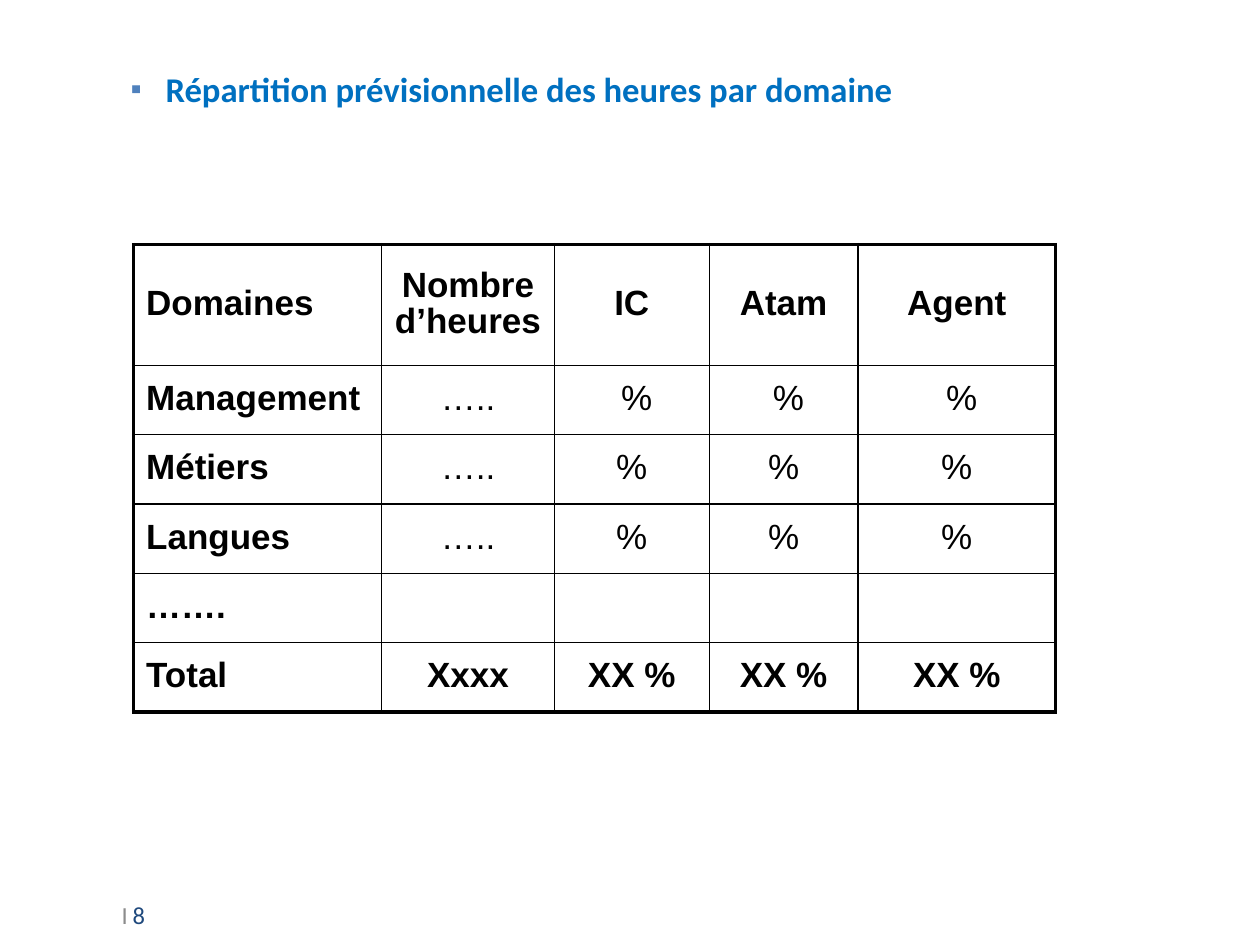
from pptx import Presentation
from pptx.dml.color import RGBColor
from pptx.enum.text import MSO_ANCHOR as Anchor, MSO_AUTO_SIZE as Fit, PP_ALIGN as Align
from pptx.oxml import parse_xml
from pptx.oxml.ns import nsdecls
from pptx.util import Inches, Pt

BLACK, BLUE, NAVY, GREY, MARK = "000000", "0070C0", "1F497D", "8C8C8C", "4F81BD"
COLS = [1.97, 1.37, 1.23, 1.18, 1.57]
HIGHS = [0.96] + [0.55] * 5
ROWS = [
    ["Domaines", "Nombre d’heures", "IC", "Atam", "Agent"],
    ["Management", "…..", " %", " %", " %"],
    ["Métiers", "…..", "%", "%", "%"],
    ["Langues", "…..", "%", "%", "%"],
    ["…….", "", "", "", ""],
    ["Total", "Xxxx", "XX %", "XX %", "XX %"],
]


def tint(code):
    return RGBColor.from_string(code)


class Page:
    body, grid = "Calibri", "Arial"
    thin, thick = 1, 2.25

    def __init__(self, slide):
        self.slide = slide

    def style(self, run, font, size, color, bold=False):
        run.font.name = font
        run.font.size = Pt(size)
        run.font.color.rgb = tint(color)
        run.font.bold = bold

    def fill(self, para, parts):
        for text, size, color, bold in parts:
            run = para.add_run()
            run.text = text
            self.style(run, self.body, size, color, bold)

    def title(self, box, parts):
        shape = self.slide.shapes.title
        shape.left, shape.top, shape.width, shape.height = map(Inches, box)
        frame = shape.text_frame
        frame.auto_size = Fit.NONE
        frame.vertical_anchor = Anchor.MIDDLE
        para = frame.paragraphs[0]
        para.alignment = Align.CENTER
        self.fill(para, parts)
        props = para._p.get_or_add_pPr()
        props.set("marL", str(Inches(0.22)))
        props.set("indent", str(Inches(-0.22)))
        for xml in (
            f'<a:buClr {nsdecls("a")}><a:srgbClr val="{MARK}"/></a:buClr>',
            f'<a:buFont {nsdecls("a")} typeface="Arial"/>',
            f'<a:buChar {nsdecls("a")} char="▪"/>',
        ):
            props.append(parse_xml(xml))

    def text(self, box, parts):
        frame = self.slide.shapes.add_textbox(*map(Inches, box)).text_frame
        frame.word_wrap = True
        frame.vertical_anchor = Anchor.MIDDLE
        self.fill(frame.paragraphs[0], parts)

    def edge(self, cell, side, width):
        cell._tc.get_or_add_tcPr().append(parse_xml(
            f'<a:ln{side} {nsdecls("a")} w="{Pt(width)}"><a:solidFill>'
            f'<a:srgbClr val="{BLACK}"/></a:solidFill></a:ln{side}>'))

    def cell(self, cell, text, bold, align, outer):
        cell.vertical_anchor = Anchor.MIDDLE
        for side in "LRTB":
            self.edge(cell, side, self.thick if side in outer else self.thin)
        cell.fill.background()
        para = cell.text_frame.paragraphs[0]
        para.text = text
        para.alignment = align
        para.line_spacing = 0.9
        for run in para.runs:
            self.style(run, self.grid, 20, BLACK, bold)

    def table(self, left, top, rows, cols, highs):
        box = map(Inches, (left, top, sum(cols), sum(highs)))
        table = self.slide.shapes.add_table(len(rows), len(cols), *box).table
        table.first_row = table.horz_banding = False
        for col, width in zip(table.columns, cols):
            col.width = Inches(width)
        for row, high in zip(table.rows, highs):
            row.height = Inches(high)
        end, last = len(rows) - 1, len(cols) - 1
        for r, row in enumerate(rows):
            for c, text in enumerate(row):
                outer = [s for s, hit in zip("LRTB", (c == 0, c == last, r == 0, r == end)) if hit]
                bold = c == 0 or r in (0, end)
                align = Align.CENTER if c else Align.LEFT
                self.cell(table.cell(r, c), text, bold, align, outer)


def main():
    deck = Presentation()
    deck.slide_width, deck.slide_height = Inches(10), Inches(7.5)
    page = Page(deck.slides.add_slide(deck.slide_layouts[5]))
    page.text((0.83, 7, 1, 0.52), [
        (" ", 12, GREY, False), ("I", 14, GREY, False),
        (" ", 12, GREY, False), ("8", 14, NAVY, False)])
    page.title((0.59, 0.52, 6.94, 0.37), [
        (" ", 18, BLACK, False),
        ("Répartition prévisionnelle des heures par domaine", 19.8, BLUE, True)])
    page.table(1.06, 1.94, ROWS, COLS, HIGHS)
    deck.save("out.pptx")


if __name__ == "__main__":
    main()
